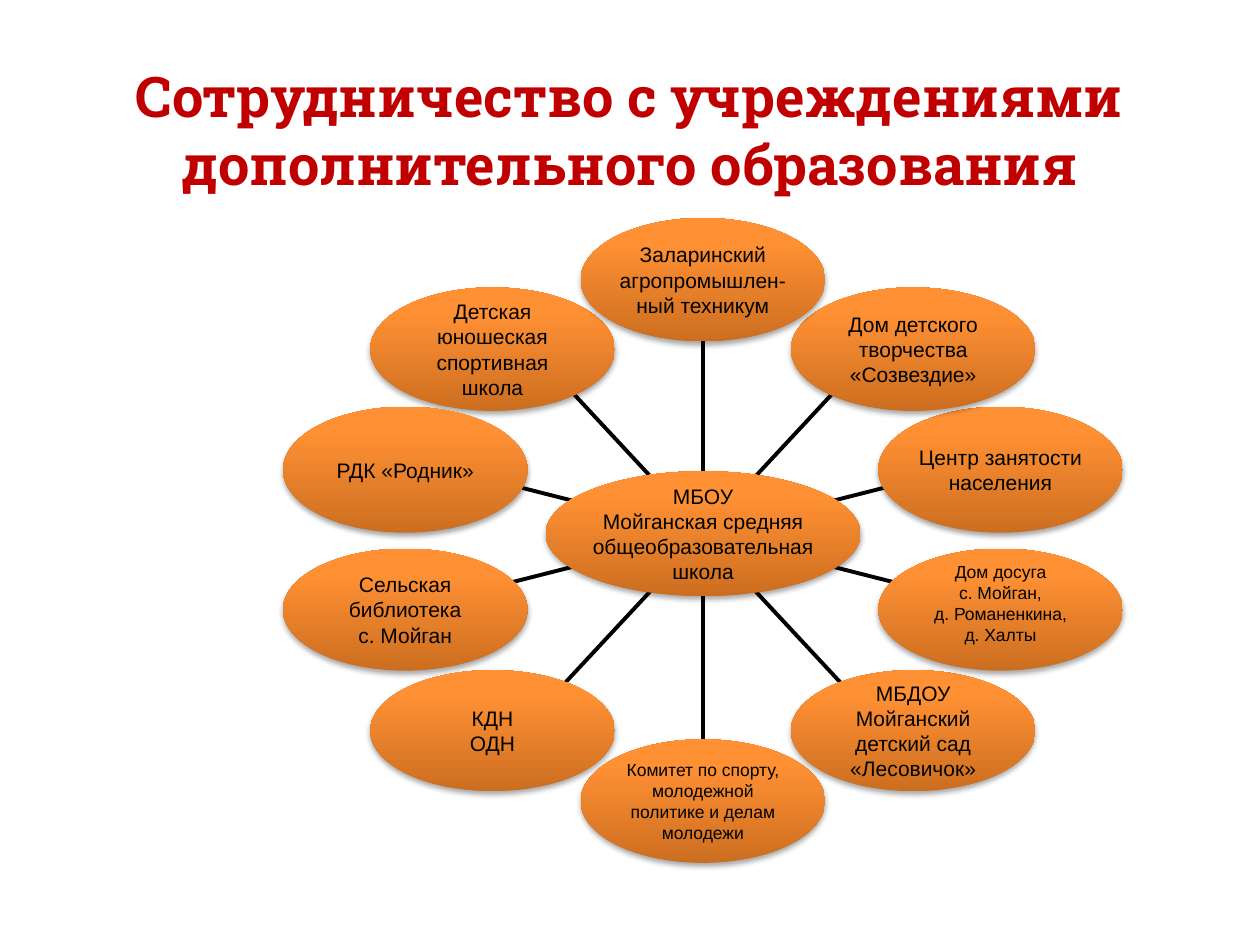
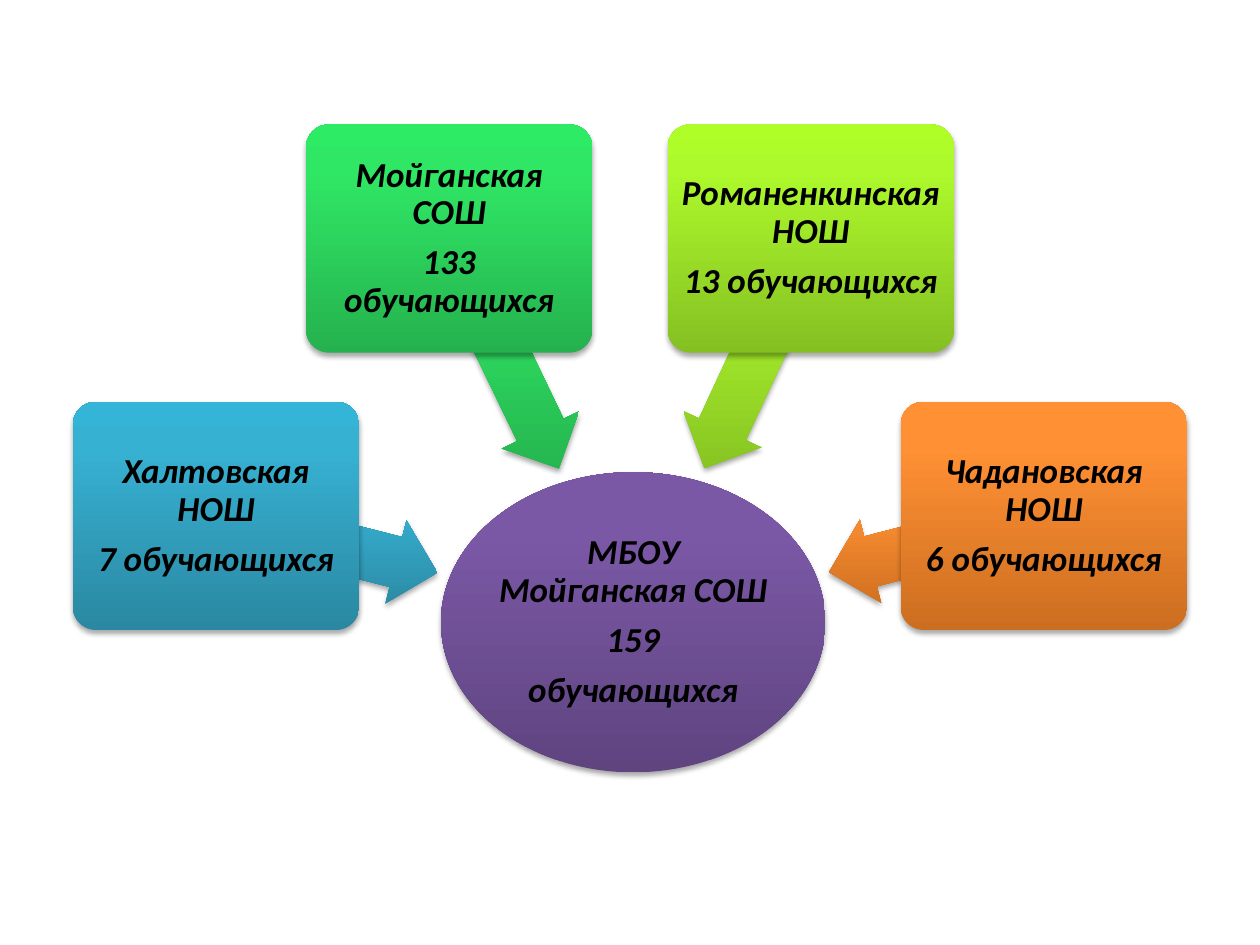
import copy

import lxml.etree
import pptx
import pptx.dml.color
import pptx.enum.shapes
import pptx.enum.text
import pptx.oxml.ns
import pptx.util

Cm = pptx.util.Cm
Pt = pptx.util.Pt
RGB = pptx.dml.color.RGBColor
Kind = pptx.enum.shapes.MSO_SHAPE
Anchor = pptx.enum.text.MSO_ANCHOR
qn = pptx.oxml.ns.qn

BLACK = RGB(0x00, 0x00, 0x00)
RED = RGB(0xC0, 0x00, 0x00)
# Each tone runs from the bottom of a shape to its top.
ORANGE = RGB(0xCC, 0x6E, 0x20), RGB(0xFF, 0x90, 0x34), RGB(0xFF, 0x91, 0x36)
PURPLE = RGB(0x5F, 0x44, 0x80), RGB(0x7B, 0x58, 0xA6), RGB(0x7C, 0x57, 0xA8)
BLUE = RGB(0x2A, 0x88, 0xA2), RGB(0x37, 0xB1, 0xD2), RGB(0x34, 0xB4, 0xD6)
GREEN = RGB(0x25, 0xB2, 0x4E), RGB(0x30, 0xE7, 0x65), RGB(0x2D, 0xEB, 0x64)
LIME = RGB(0x85, 0xC0, 0x22), RGB(0xAD, 0xF9, 0x2C), RGB(0xAF, 0xFE, 0x28)


def write(text, shape, size=12, font="Arial", color=BLACK, bold=False,
          italic=False, anchor=Anchor.MIDDLE, inset=0, lift=0, spacing=None,
          after=None):
    """Fill a shape with centred text; lift is extra room at the bottom."""
    frame = shape.text_frame
    frame.word_wrap = True
    frame.vertical_anchor = anchor
    frame.margin_left = frame.margin_right = frame.margin_top = Cm(inset)
    frame.margin_bottom = Cm(inset + lift)
    frame.text = text
    for par in frame.paragraphs:
        par.alignment = pptx.enum.text.PP_ALIGN.CENTER
        par.line_spacing = spacing
        par.space_after = after
        for run in par.runs:
            run.font.size = Pt(size)
            run.font.name = font
            run.font.bold = bold
            run.font.italic = italic
            run.font.color.rgb = color


def gloss(slide, kind, left, top, width, height, tone):
    """Add a shape with an upright gradient and a soft shadow."""
    shape = slide.shapes.add_shape(kind, Cm(left), Cm(top), Cm(width), Cm(height))
    shape.line.fill.background()
    shape.fill.gradient()
    shape.fill.gradient_angle = 90
    props = shape._element.spPr
    grad = props.find(qn("a:gradFill"))
    grad.set("rotWithShape", "0")
    stops = grad.find(qn("a:gsLst"))
    stops.append(copy.deepcopy(stops[0]))
    for stop, color, place in zip(shape.fill.gradient_stops, tone, (0, 0.8, 1)):
        stop.color.rgb = color
        stop.position = place
    shape.shadow.inherit = False
    shade = lxml.etree.SubElement(
        props.find(qn("a:effectLst")), qn("a:outerShdw"), blurRad="40000",
        dist="23000", dir="5400000", rotWithShape="0")
    ink = lxml.etree.SubElement(shade, qn("a:srgbClr"), val="000000")
    lxml.etree.SubElement(ink, qn("a:alpha"), val="35000")
    return shape


deck = pptx.Presentation()
deck.slide_width, deck.slide_height = Cm(25.4), Cm(19.05)
blank = deck.slide_layouts[6]

# Slide 1: partners around the school
slide = deck.slides.add_slide(blank)
hub_x, hub_y = 14.17, 10.76
# Sideways distance of a partner: start and end of its spoke from the hub
spokes = {0: (0, 1.26, 0, 4.15),
          4.24: (0.94, 1.03, 2.83, 3.06),
          6: (1.54, 0.39, 4.57, 1.16)}
partners = [
    ("Детская юношеская спортивная школа", -4.24, -3.72, 2.49, 12, 0),
    ("РДК «Родник»", -6, -1.29, 2.54, 12, 0),
    ("Сельская библиотека\nс. Мойган", -6, 1.53, 2.46, 12, 0),
    ("КДН\nОДН", -4.24, 3.97, 2.44, 12, 0),
    ("Комитет по спорту, молодежной политике и делам молодежи",
     0, 5.39, 2.49, 10, 0),
    ("МБДОУ Мойганский детский сад «Лесовичок»", 4.24, 3.97, 2.44, 12, 0),
    ("Дом досуга\nс. Мойган,\nд. Романенкина,\nд. Халты",
     6, 1.53, 2.46, 10, 0.28),
    ("Центр занятости населения", 6, -1.29, 2.54, 12, 0),
    ("Дом детского творчества «Созвездие»", 4.24, -3.72, 2.49, 12, 0),
    ("Заларинский агропромышлен-ный техникум", 0, -5.12, 2.49, 12, 0),
]
wide = 4.93
for text, dx, dy, high, size, lift in partners:
    x1, y1, x2, y2 = spokes[abs(dx)]
    across = -1 if dx < 0 else 1
    down = -1 if dy < 0 else 1
    spoke = slide.shapes.add_connector(
        pptx.enum.shapes.MSO_CONNECTOR.STRAIGHT,
        Cm(hub_x + across * x1), Cm(hub_y + down * y1),
        Cm(hub_x + across * x2), Cm(hub_y + down * y2))
    spoke.line.color.rgb = BLACK
    spoke.line.width = Pt(2.25)
    lxml.etree.SubElement(spoke._element.spPr, qn("a:effectLst"))
    oval = gloss(slide, Kind.OVAL, hub_x + dx - wide / 2, hub_y + dy - high / 2,
                 wide, high, ORANGE)
    write(text, oval, size=size, lift=lift)

hub = gloss(slide, Kind.OVAL, hub_x - 3.17, hub_y - 1.26, 6.35, 2.52, ORANGE)
write("МБОУ\nМойганская средняя общеобразовательная школа", hub)

title = slide.shapes.add_textbox(Cm(1.9), Cm(1.12), Cm(21.6), Cm(3))
write("Сотрудничество с учреждениями дополнительного образования", title,
      size=32, font="Roboto Slab", color=RED, bold=True, anchor=Anchor.TOP,
      inset=0.13)
edge = lxml.etree.Element(qn("a:ln"), w="10541")
paint = lxml.etree.SubElement(edge, qn("a:solidFill"))
lxml.etree.SubElement(paint, qn("a:srgbClr"), val="632523")
title.text_frame.paragraphs[0].runs[0].font._element.insert(0, edge)

# Slide 2: four schools and their total
slide = deck.slides.add_slide(blank)
style = dict(size=20, font="Calibri", bold=True, italic=True, spacing=0.9,
             after=Pt(7))
total = gloss(slide, Kind.OVAL, 8.89, 9.52, 7.75, 6.05, PURPLE)
write("МБОУ Мойганская СОШ\n159\nобучающихся", total, inset=0.03, **style)

# Text, tone, card left and top, arrow left, top, length and turn
schools = [
    ("Халтовская НОШ\n7 обучающихся", BLUE, 1.47, 8.1, 4.29, 10.11, 4.6, 194.3),
    ("Мойганская СОШ\n133 обучающихся", GREEN, 6.17, 2.51, 7.59, 6.27, 5.13, 244.3),
    ("Романенкинская НОШ\n13 обучающихся", LIME, 13.46, 2.51, 12.73, 6.27, 5.08, 294.9),
    ("Чадановская НОШ\n6 обучающихся", ORANGE, 18.16, 8.1, 16.64, 10.11, 4.47, 345.5),
]
for text, tone, left, top, tip_x, tip_y, length, turn in schools:
    arrow = gloss(slide, Kind.LEFT_ARROW, tip_x, tip_y, length, 1.73, tone)
    arrow.adjustments[0] = 0.6
    arrow.rotation = turn
    card = gloss(slide, Kind.ROUNDED_RECTANGLE, left, top, 5.77, 4.6, tone)
    card.adjustments[0] = 0.1
    write(text, card, inset=0.1, **style)

deck.save("out.pptx")
